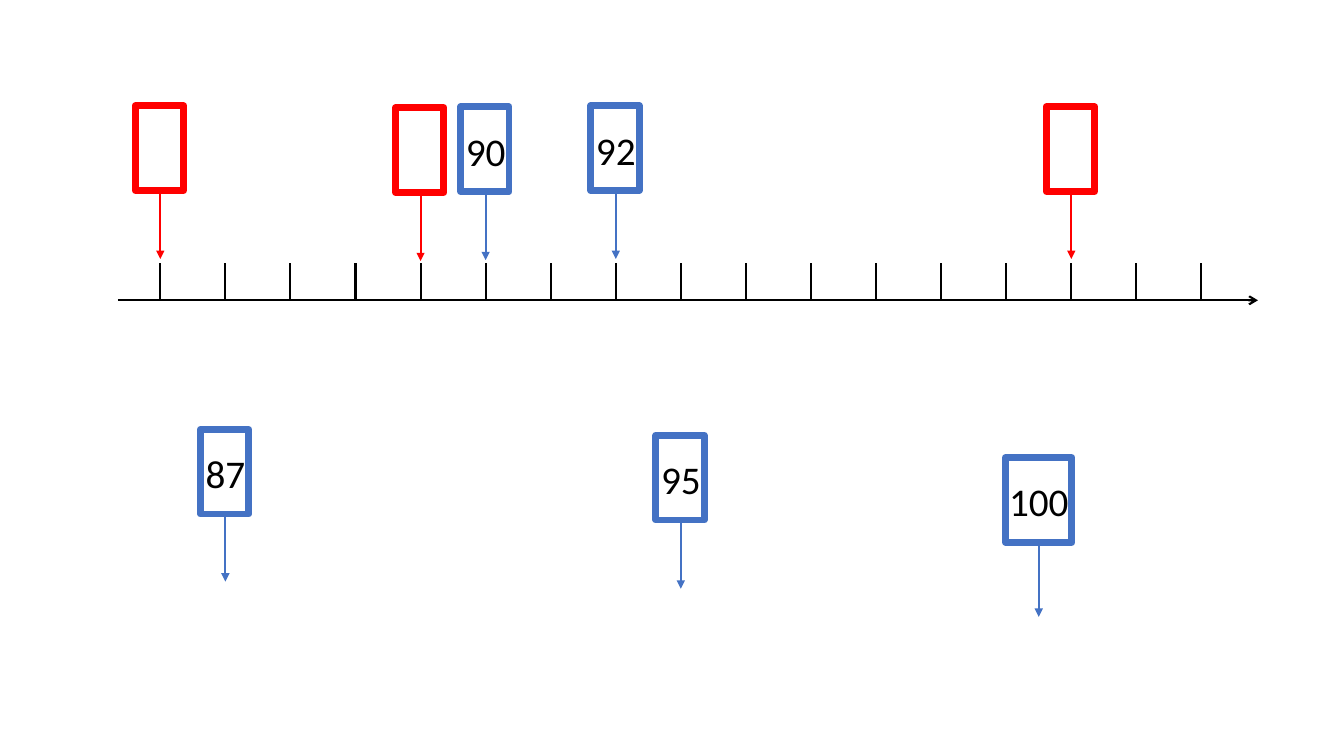
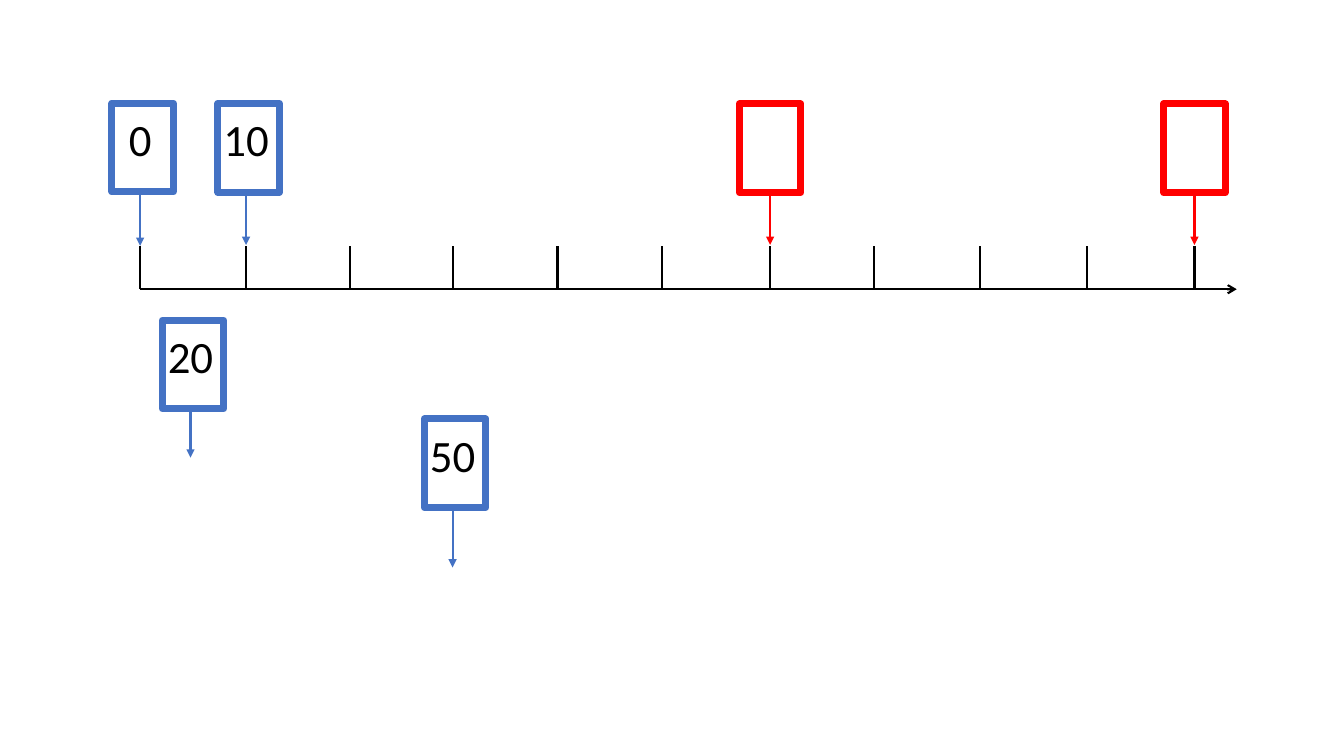
from dataclasses import dataclass

import lxml.etree
import pptx
import pptx.dml.color
import pptx.enum.shapes
import pptx.enum.text
import pptx.oxml.ns
import pptx.util

Pt = pptx.util.Pt
RGB = pptx.dml.color.RGBColor
qn = pptx.oxml.ns.qn


@dataclass(frozen=True)
class Theme:
    known: RGB = RGB(0x44, 0x72, 0xC4)
    unknown: RGB = RGB(0xFF, 0x00, 0x00)
    ink: RGB = RGB(0x00, 0x00, 0x00)
    font: str = "Calibri"
    small_number: int = 28
    large_number: int = 32
    border: float = 5
    stroke: float = 1.5


@dataclass(frozen=True)
class CardSize:
    width: float
    height: float
    number_size: int
    number_top: float
    number_height: float


def set_all(target, values):
    for name, value in values.items():
        setattr(target, name, value)


class NumberLineDeck:
    def __init__(self, theme):
        self.theme = theme
        self.deck = pptx.Presentation()
        set_all(self.deck, {"slide_width": Pt(960), "slide_height": Pt(540)})
        self.slide = None

    def new_slide(self):
        self.slide = self.deck.slides.add_slide(self.deck.slide_layouts[6])

    def group(self):
        return self.slide.shapes.add_group_shape().shapes

    def stroke(self, parts, start, end, color, head=None):
        """Straight line, with an optional arrowhead at its end."""
        points = [Pt(length) for length in (*start, *end)]
        stroke = parts.add_connector(
            pptx.enum.shapes.MSO_CONNECTOR.STRAIGHT, *points)
        stroke.line.color.rgb = color
        stroke.line.width = Pt(self.theme.stroke)
        properties = stroke.element.find(qn("p:spPr"))
        if head:
            outline = properties.find(qn("a:ln"))
            lxml.etree.SubElement(outline, qn("a:tailEnd"), type=head)
        lxml.etree.SubElement(properties, qn("a:effectLst"))

    def axis(self, left, right, base, ticks, tick_top):
        parts = self.group()
        self.stroke(parts, (left, base), (right, base), self.theme.ink, "arrow")
        for tick in ticks:
            self.stroke(parts, (tick, base), (tick, tick_top), self.theme.ink)

    def number(self, parts, text, x, top, size):
        width = 63.4
        label = parts.add_textbox(Pt(x - width / 2), Pt(top + size.number_top),
                                  Pt(width), Pt(size.number_height))
        set_all(label.text_frame, {
            "text": text,
            "word_wrap": True,
            "auto_size": pptx.enum.text.MSO_AUTO_SIZE.SHAPE_TO_FIT_TEXT,
        })
        line = label.text_frame.paragraphs[0]
        line.alignment = pptx.enum.text.PP_ALIGN.CENTER
        font = line.runs[0].font
        set_all(font, {"name": self.theme.font, "size": Pt(size.number_size)})
        font.color.rgb = self.theme.ink

    def card(self, size, x, top, tip, text="", shift=0, width=None):
        """Framed card with a pointer at x; red when its number is missing."""
        parts = self.group()
        color = self.theme.known if text else self.theme.unknown
        width = width or size.width
        frame = parts.add_shape(
            pptx.enum.shapes.MSO_SHAPE.RECTANGLE, Pt(x - width / 2 + shift),
            Pt(top), Pt(width), Pt(size.height))
        frame.shadow.inherit = False
        frame.fill.background()
        frame.line.color.rgb = color
        frame.line.width = Pt(self.theme.border)
        if text:
            self.number(parts, text, x, top, size)
        self.stroke(parts, (x, top + size.height), (x, tip), color, "triangle")


def main():
    theme = Theme()
    deck = NumberLineDeck(theme)

    # Number line in steps of one
    deck.new_slide()
    first, step = 114.5, 46.48
    deck.axis(84.2, 898.6, 214.5, [first + step * n for n in range(17)], 187.7)
    narrow = CardSize(34.6, 60.5, theme.small_number, 10.8, 41)
    for position, top, tip, text in (
        (5, 76.3, 185.8, "90"),
        (7, 75.6, 185, "92"),
        (4, 77, 186.5, ""),
        (0, 75.6, 185, ""),
        (14, 76.3, 185, ""),
        (1, 306.7, 415.4, "87"),
        (8, 311, 420.5, "95"),
    ):
        deck.card(narrow, first + step * position, top, tip, text, shift=-0.6)
    deck.card(narrow, first + step * 13.5, 326.9, 440.6, "100", width=47.5)

    # Number line in steps of ten
    deck.new_slide()
    ticks = [100.1, 175.8, 249.8, 323.3, 398.2, 473,
             550.1, 624.2, 699.8, 776.2, 853.2]
    deck.axis(ticks[0], 883.4, 206.6, ticks, 175.7)
    wide = CardSize(43.9, 63.4, theme.large_number, 2.4, 46)
    for x, top, tip, text in (
        (ticks[0], 73.7, 175.7, "0"),
        (ticks[3], 299.2, 405.4, "50"),
        (136.1, 228.7, 326.9, "20"),
        (ticks[1], 73.9, 175, "10"),
    ):
        deck.card(wide, x, top, tip, text, shift=1.8)
    for x in (ticks[6], ticks[10]):
        deck.card(wide, x, 74.2, 175)

    deck.deck.save("out.pptx")


if __name__ == "__main__":
    main()
